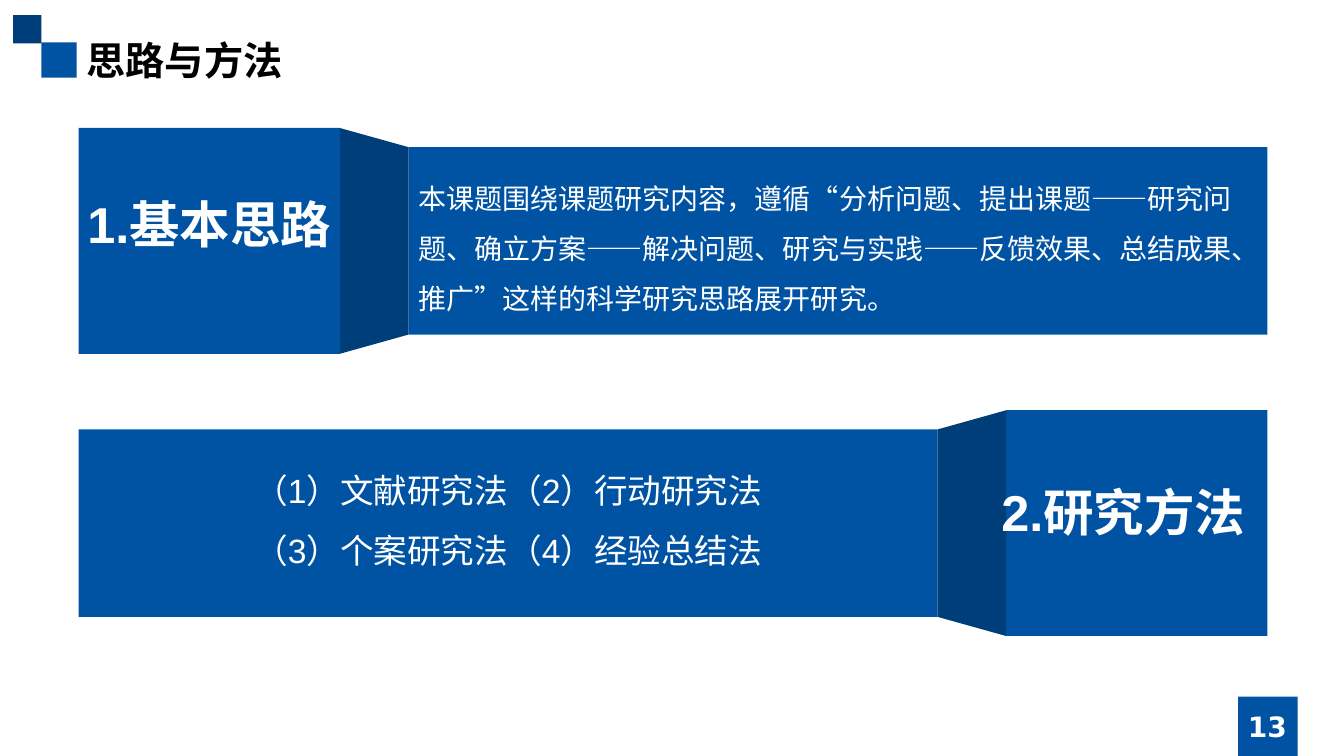
from lxml import etree
from pptx import Presentation
from pptx.dml.color import RGBColor
from pptx.enum.shapes import MSO_SHAPE
from pptx.enum.text import MSO_ANCHOR, MSO_AUTO_SIZE, PP_ALIGN
from pptx.oxml.ns import qn
from pptx.util import Emu, Pt

BLUE = RGBColor(0x00, 0x53, 0xA3)
NAVY = RGBColor(0x00, 0x3E, 0x7A)
WHITE = RGBColor(0xFF, 0xFF, 0xFF)
BLACK = RGBColor(0x00, 0x00, 0x00)
RECTANGLE = MSO_SHAPE.RECTANGLE
TRAPEZOID = MSO_SHAPE.TRAPEZOID
LEFT, CENTER = PP_ALIGN.LEFT, PP_ALIGN.CENTER
TOP, MIDDLE = MSO_ANCHOR.TOP, MSO_ANCHOR.MIDDLE
NO_AUTOFIT = MSO_AUTO_SIZE.NONE
CHINESE_FONT = "Noto Sans CJK SC"

TITLE = "思路与方法"
PAGE_NUMBER = "13"
SQUARES = [
    ((41, 42, 35, 35), BLUE),
    ((13, 15, 28, 28), NAVY),
    ((1228, 691, 59, 59), BLUE),
]
BANNERS = [
    {
        "top": 127, "label_on_left": True,
        "label": "1.基本思路", "label_box": (66, 187, 283, 71),
        "lines": ["本课题围绕课题研究内容，遵循“分析问题、提出课题——研究问题、确立方案——解决问题、研究与实践——反馈效果、总结成果、推广”这样的科学研究思路展开研究。"],
        "body_box": (405, 158, 852, 161), "size": 20, "align": LEFT,
    },
    {
        "top": 407, "label_on_left": False,
        "label": "2.研究方法", "label_box": (971, 472, 286, 71),
        "lines": ["（1）文献研究法（2）行动研究法", "（3）个案研究法（4）经验总结法"],
        "body_box": (78, 441, 852, 131), "size": 24, "align": CENTER,
    },
]

SCALE = 9144
SLIDE_WIDTH, SLIDE_HEIGHT = 1333, 750
BANNER_LEFT = 78
LABEL_WIDTH, LABEL_HEIGHT = 259, 224
FOLD_WIDTH = 68
BODY_WIDTH, BODY_HEIGHT = 852, 186
INSET = (LABEL_HEIGHT - BODY_HEIGHT) // 2


def px(value):
    return Emu(round(value * SCALE))


def add_block(slide, kind, box, color):
    shape = slide.shapes.add_shape(kind, *map(px, box))
    shape.shadow.inherit = False
    shape.fill.solid()
    shape.fill.fore_color.rgb = color
    shape.line.fill.background()
    return shape


def write_text(shape, lines, size, font, color, bold=False, align=LEFT, anchor=TOP, spacing=1.0):
    frame = shape.text_frame
    frame.word_wrap = True
    frame.auto_size = NO_AUTOFIT
    frame.vertical_anchor = anchor
    for index, line in enumerate(lines):
        paragraph = frame.add_paragraph() if index else frame.paragraphs[0]
        paragraph.alignment = align
        paragraph.line_spacing = spacing
        paragraph.space_before = Pt(0)
        run = paragraph.add_run()
        run.text = line
        run.font.size = Pt(size)
        run.font.bold = bold
        run.font.name = font
        run.font.color.rgb = color
        east_asian = etree.SubElement(run.font._element, qn("a:ea"))
        east_asian.set("typeface", CHINESE_FONT)


def add_text(slide, box, *content, **style):
    write_text(slide.shapes.add_textbox(*map(px, box)), *content, **style)


def add_banner(slide, banner):
    top = banner["top"]
    if banner["label_on_left"]:
        label_left = BANNER_LEFT
        fold_left = label_left + LABEL_WIDTH
        body_left = fold_left + FOLD_WIDTH
        rotation = 90
    else:
        body_left = BANNER_LEFT
        fold_left = body_left + BODY_WIDTH
        label_left = fold_left + FOLD_WIDTH
        rotation = 270
    add_block(slide, RECTANGLE, (label_left, top, LABEL_WIDTH, LABEL_HEIGHT), BLUE)
    add_block(slide, RECTANGLE, (body_left, top + INSET, BODY_WIDTH, BODY_HEIGHT), BLUE)
    turn_offset = (LABEL_HEIGHT - FOLD_WIDTH) / 2
    fold_box = (fold_left - turn_offset, top + turn_offset, LABEL_HEIGHT, FOLD_WIDTH)
    fold = add_block(slide, TRAPEZOID, fold_box, NAVY)
    fold.rotation = rotation
    fold.adjustments[0] = INSET / FOLD_WIDTH
    add_text(slide, banner["label_box"], [banner["label"]], 36, "Arial", WHITE,
             bold=True, align=CENTER)
    add_text(slide, banner["body_box"], banner["lines"], banner["size"], "Arial", WHITE,
             align=banner["align"], spacing=1.5)


def main():
    presentation = Presentation()
    presentation.slide_width = px(SLIDE_WIDTH)
    presentation.slide_height = px(SLIDE_HEIGHT)
    slide = presentation.slides.add_slide(presentation.slide_layouts[5])
    title = slide.shapes.title
    title.left, title.top, title.width, title.height = map(px, (76, 31, 1181, 57))
    write_text(title, [TITLE], 28, CHINESE_FONT, BLACK, bold=True)
    for box, color in SQUARES:
        add_block(slide, RECTANGLE, box, color)
    add_text(slide, (1181, 701, 152, 40), [PAGE_NUMBER], 20, "DejaVu Sans", WHITE,
             bold=True, align=CENTER, anchor=MIDDLE)
    for banner in BANNERS:
        add_banner(slide, banner)
    presentation.save("out.pptx")


if __name__ == "__main__":
    main()
